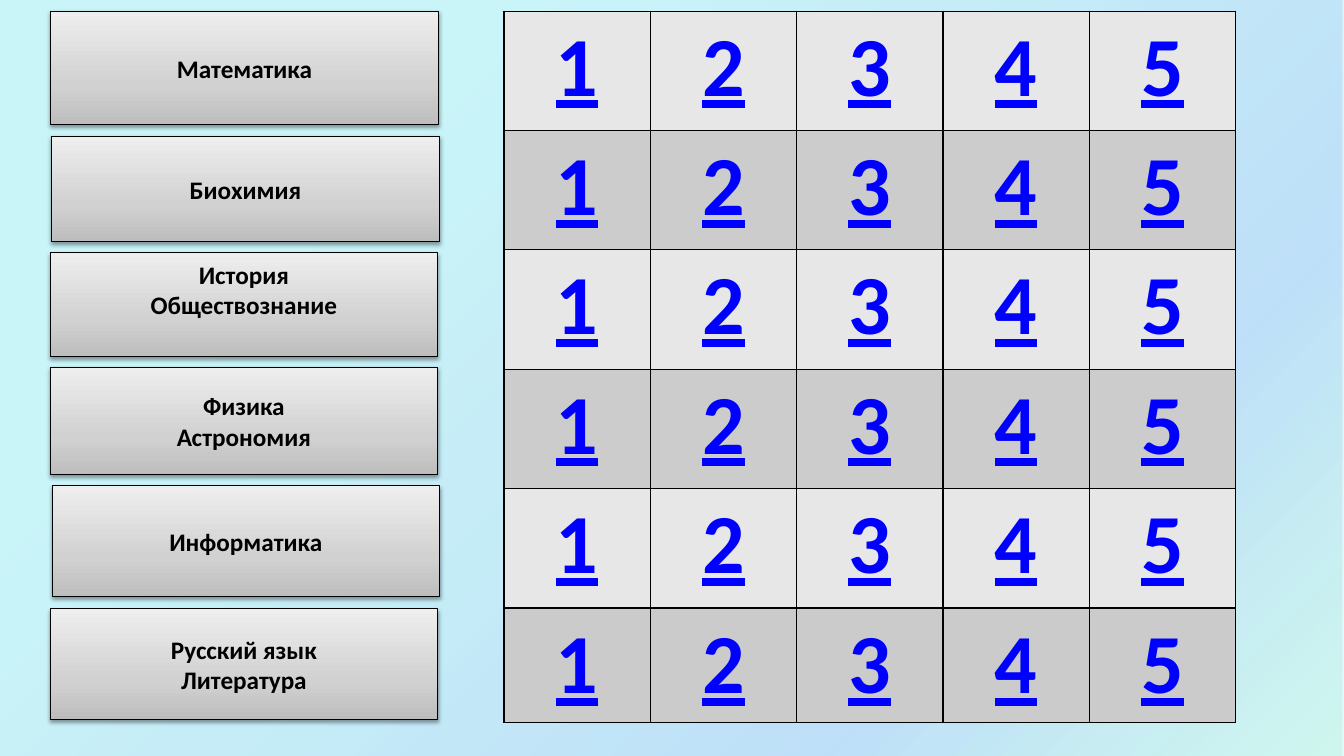
from lxml import etree
from pptx import Presentation
from pptx.dml.color import RGBColor
from pptx.enum.shapes import MSO_SHAPE
from pptx.enum.text import MSO_ANCHOR, PP_ALIGN
from pptx.oxml.ns import qn
from pptx.util import Pt

SLIDE_WIDTH, SLIDE_HEIGHT = 960, 540

# Gradient stops: position %, colour, opacity %
BACKDROP_STOPS = [(25, "21D6E0", 23), (75, "0087E6", 25),
                  (100, "03D4A8", 18), (100, "005CBF", 26)]
BUTTON_STOPS = [(0, "BDBDBD", 100), (35, "D1D1D1", 100), (100, "EEEEEE", 100)]

# Subject buttons: lines, left, top, width, height, bottom inset
SUBJECTS = [
    (["Математика"], 36, 7.9, 277.2, 81.4, 3.6),
    (["Биохимия"], 36.7, 97.2, 277.2, 75.6, 3.6),
    (["История", "Обществознание"], 36, 180.5, 276.5, 74.2, 25.6),
    (["Физика", "Астрономия"], 36, 262.2, 276.5, 77, 3.6),
    (["Информатика"], 37.4, 347, 276.5, 79.2, 3.6),
    (["Русский язык", "Литература"], 36, 434.9, 276.5, 79.2, 3.6),
]
SCORES = ["1", "2", "3", "4", "5"]
GRID_LEFT, GRID_WIDTH = 360, 522.7


def color(value):
    return RGBColor.from_string(value)


def add_element(parent, tag, **attributes):
    child = etree.SubElement(parent, qn(tag))
    for name, value in attributes.items():
        child.set(name, str(value))
    return child


def add_color(parent, value, opacity=100):
    element = add_element(parent, "a:srgbClr", val=value)
    if opacity < 100:
        add_element(element, "a:alpha", val=opacity * 1000)


class Board:
    font = "Calibri"
    ink = "000000"
    link = "0000FF"

    def __init__(self, slide):
        self.slide = slide

    def add_text(self, paragraph, text, size, value, underline=False):
        paragraph.alignment = PP_ALIGN.CENTER
        run = paragraph.add_run()
        run.text = text
        font = run.font
        font.name, font.size, font.bold = self.font, Pt(size), True
        font.underline = underline
        font.color.rgb = color(value)

    def panel(self, left, top, width, height, stops, angle):
        shape = self.slide.shapes.add_shape(
            MSO_SHAPE.RECTANGLE, Pt(left), Pt(top), Pt(width), Pt(height))
        shape.shadow.inherit = False
        shape.line.fill.background()
        shape.fill.solid()
        properties = shape.element.spPr
        gradient = etree.Element(qn("a:gradFill"), rotWithShape="1")
        stop_list = add_element(gradient, "a:gsLst")
        for position, value, opacity in stops:
            stop = add_element(stop_list, "a:gs", pos=position * 1000)
            add_color(stop, value, opacity)
        add_element(gradient, "a:lin", ang=angle * 60000, scaled=0)
        properties.replace(properties.find(qn("a:solidFill")), gradient)
        return shape

    def button(self, lines, left, top, width, height, bottom_inset):
        shape = self.panel(left, top, width, height, BUTTON_STOPS, 270)
        shape.line.color.rgb = color(self.ink)
        shape.line.width = Pt(0.75)
        effects = shape.element.spPr.find(qn("a:effectLst"))
        shadow = add_element(effects, "a:outerShdw", blurRad=Pt(3.1), dist=Pt(1.6),
                             dir=90 * 60000, rotWithShape=0)
        add_color(shadow, self.ink, 38)
        frame = shape.text_frame
        frame.word_wrap = True
        frame.vertical_anchor = MSO_ANCHOR.MIDDLE
        frame.margin_bottom = Pt(bottom_inset)
        for index, line in enumerate(lines):
            paragraph = frame.add_paragraph() if index else frame.paragraphs[0]
            self.add_text(paragraph, line, 18, self.ink)

    def border(self, cell):
        properties = cell._tc.get_or_add_tcPr()
        for side in ("a:lnL", "a:lnR", "a:lnT", "a:lnB"):
            line = add_element(properties, side, w=Pt(1))
            add_color(add_element(line, "a:solidFill"), self.ink)

    def score_grid(self, top, row_height, fills):
        shape = self.slide.shapes.add_table(
            len(fills), len(SCORES), Pt(GRID_LEFT), Pt(top),
            Pt(GRID_WIDTH), Pt(row_height * len(fills)))
        table = shape.table
        for column in table.columns:
            column.width = Pt(GRID_WIDTH / len(SCORES))
        for row, fill in zip(table.rows, fills):
            row.height = Pt(row_height)
            for cell, score in zip(row.cells, SCORES):
                self.border(cell)
                cell.fill.solid()
                cell.fill.fore_color.rgb = color(fill)
                self.add_text(cell.text_frame.paragraphs[0], score, 60, self.link, True)


def main():
    presentation = Presentation()
    presentation.slide_width = Pt(SLIDE_WIDTH)
    presentation.slide_height = Pt(SLIDE_HEIGHT)
    board = Board(presentation.slides.add_slide(presentation.slide_layouts[6]))

    # Backdrop
    board.panel(0, 0, SLIDE_WIDTH, 552, BACKDROP_STOPS, 45)

    # Score grids
    light, dark = "E7E7E7", "CCCCCC"
    board.score_grid(8, 85.25, [light, dark, light, dark, light])
    board.score_grid(434.9, 81.4, ["CBCBCB"])

    # Subject buttons
    for subject in SUBJECTS:
        board.button(*subject)

    presentation.save("out.pptx")


if __name__ == "__main__":
    main()
